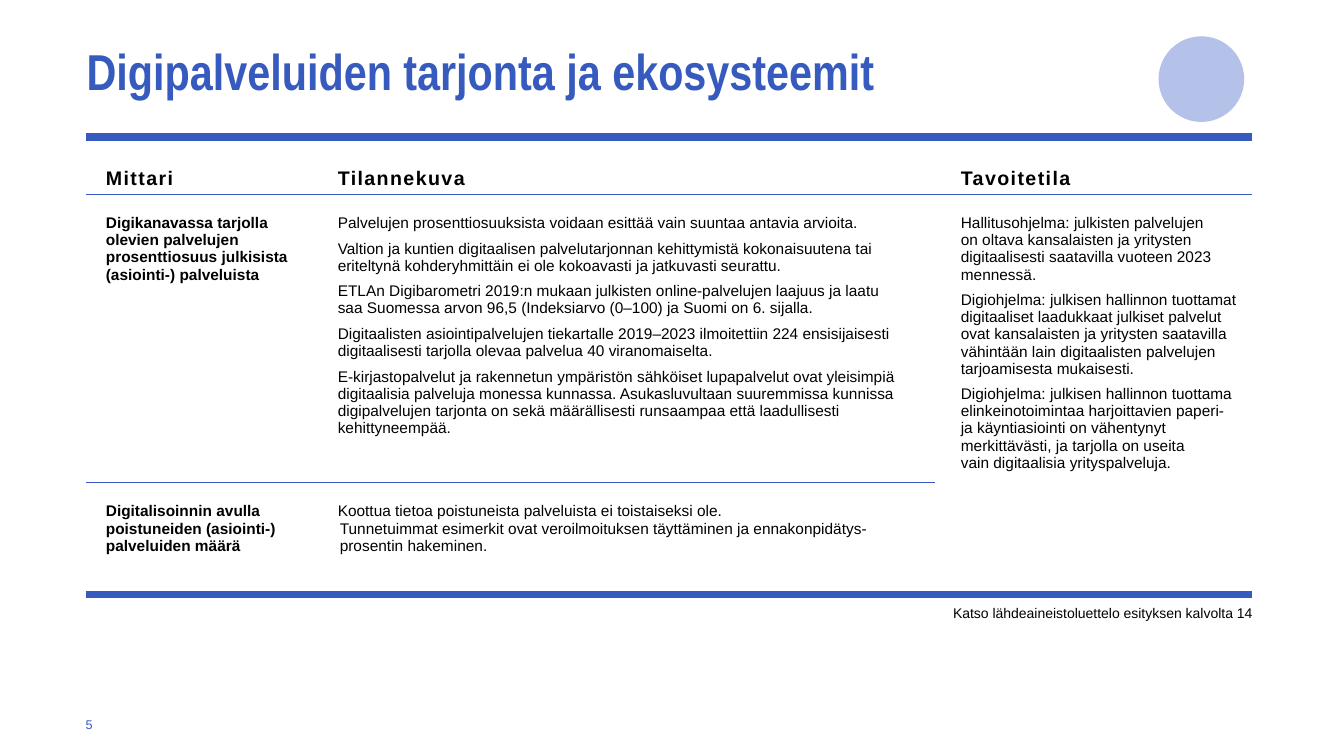
import copy
from dataclasses import dataclass

import pptx
import pptx.dml.color
import pptx.enum.shapes
import pptx.enum.text
import pptx.oxml
import pptx.oxml.ns
import pptx.util
from pptx.util import Inches


@dataclass(frozen=True)
class Theme:
    blue: str = "365ABD"
    pale: str = "ACBCE7"
    black: str = "000000"
    font: str = "Arial"
    title_font: str = "Arial Narrow"
    title: int = 36
    heading: int = 14
    body: int = 11
    note: int = 10
    number: int = 9


theme = Theme()
qn = pptx.oxml.ns.qn
Align = pptx.enum.text.PP_ALIGN
Anchor = pptx.enum.text.MSO_ANCHOR


def write(frame, texts, size, color=theme.black, bold=False, name=theme.font,
          align=Align.LEFT, after=0, tracking=0):
    """Fill a text frame with one paragraph per text; newlines are line breaks."""
    frame.word_wrap = True
    for index, text in enumerate(texts):
        para = frame.paragraphs[0] if index == 0 else frame.add_paragraph()
        para.text = text
        para.alignment = align
        para.space_before = pptx.util.Pt(0)
        para.space_after = pptx.util.Pt(after)
        for span in para.runs:
            span.font.name = name
            span.font.size = pptx.util.Pt(size)
            span.font.bold = bold
            span.font.color.rgb = pptx.dml.color.RGBColor.from_string(color)
            if tracking:
                span.font._element.set("spc", str(tracking * 100))
        # Line breaks take the type size of the text around them
        for line_break in para._p.findall(qn("a:br")):
            line_break.insert(0, copy.deepcopy(para.runs[0].font._element))


def set_margins(holder, left, top, right, bottom):
    holder.margin_left, holder.margin_top = Inches(left), Inches(top)
    holder.margin_right, holder.margin_bottom = Inches(right), Inches(bottom)


deck = pptx.Presentation()
deck.slide_width, deck.slide_height = Inches(13.33), Inches(7.5)
page = deck.slides.add_slide(deck.slide_layouts[5])

# Title
title = page.shapes.title
title.left, title.top = Inches(0.86), Inches(0)
title.width, title.height = Inches(11.56), Inches(1.45)
set_margins(title.text_frame, 0, 0, 0, 0)
title.text_frame.vertical_anchor = Anchor.MIDDLE
title.text_frame.auto_size = pptx.enum.text.MSO_AUTO_SIZE.NONE
write(title.text_frame, ["Digipalveluiden tarjonta ja ekosysteemit"], theme.title,
      theme.blue, True, theme.title_font)
title.text_frame.paragraphs[0].line_spacing = 0.95

# Table content: each cell is a list of paragraphs
headings = ["Mittari", "Tilannekuva", "Tavoitetila"]
offering = [
    "Palvelujen prosenttiosuuksista voidaan esittää vain suuntaa antavia arvioita.",
    "Valtion ja kuntien digitaalisen palvelutarjonnan kehittymistä kokonaisuutena tai "
    "eriteltynä kohderyhmittäin ei ole kokoavasti ja jatkuvasti seurattu.",
    "ETLAn Digibarometri 2019:n mukaan julkisten online-palvelujen laajuus ja laatu \n"
    "saa Suomessa arvon 96,5 (Indeksiarvo (0–100) ja Suomi on 6. sijalla.",
    "Digitaalisten asiointipalvelujen tiekartalle 2019–2023 ilmoitettiin 224 ensisijaisesti "
    "digitaalisesti tarjolla olevaa palvelua 40 viranomaiselta.",
    "E-kirjastopalvelut ja rakennetun ympäristön sähköiset lupapalvelut ovat yleisimpiä "
    "digitaalisia palveluja monessa kunnassa. Asukasluvultaan suuremmissa kunnissa "
    "digipalvelujen tarjonta on sekä määrällisesti runsaampaa että laadullisesti "
    "kehittyneempää.",
]
targets = [
    "Hallitusohjelma: julkisten palvelujen \non oltava kansalaisten ja yritysten "
    "digitaalisesti saatavilla vuoteen 2023 mennessä.",
    "Digiohjelma: julkisen hallinnon tuottamat digitaaliset laadukkaat julkiset palvelut "
    "ovat kansalaisten ja yritysten saatavilla vähintään lain digitaalisten palvelujen "
    "tarjoamisesta mukaisesti.",
    "Digiohjelma: julkisen hallinnon tuottama elinkeinotoimintaa harjoittavien paperi- \n"
    "ja käyntiasiointi on vähentynyt merkittävästi, ja tarjolla on useita \n"
    "vain digitaalisia yrityspalveluja.",
]
removed = [
    "Koottua tietoa poistuneista palveluista ei toistaiseksi ole. \n"
    "Tunnetuimmat esimerkit ovat veroilmoituksen täyttäminen ja ennakonpidätys-\n"
    "prosentin hakeminen.",
]
rows = [
    [[heading] for heading in headings],
    [["Digikanavassa tarjolla olevien palvelujen \n"
      "prosenttiosuus julkisista (asiointi-) palveluista"], offering, targets],
    [["Digitalisoinnin avulla poistuneiden (asiointi-)\npalveluiden määrä"], removed, []],
]
column_widths = [2.3, 6.12, 3.15]
row_heights = [0.57, 2.86, 1.11]
rule_weights = [6, 1, 1, 6]
left_margins = [0.2, 0.2, 0.26]

# Table
frame = page.shapes.add_table(3, 3, Inches(0.85), Inches(1.36),
                              Inches(sum(column_widths)), Inches(sum(row_heights)))
table = frame.table
table.first_row = table.horz_banding = False
for column, width in zip(table.columns, column_widths):
    column.width = Inches(width)
for row, height in zip(table.rows, row_heights):
    row.height = Inches(height)
table.cell(1, 2).merge(table.cell(2, 2))

for row_index, row in enumerate(rows):
    for column_index, texts in enumerate(row):
        cell = table.cell(row_index, column_index)
        is_heading = row_index == 0
        set_margins(cell, left_margins[column_index], 0.05 if is_heading else 0.2, 0.1, 0.05)
        cell.vertical_anchor = Anchor.BOTTOM if is_heading else Anchor.TOP
        write(cell.text_frame, texts, theme.heading if is_heading else theme.body,
              bold=is_heading or column_index == 0, after=0 if is_heading else 6,
              tracking=1 if is_heading else 0)

        # Horizontal rules only; the merged target cell has none across its middle
        top, bottom = rule_weights[row_index], rule_weights[row_index + 1]
        if cell.is_merge_origin:
            bottom = rule_weights[-1]
        if cell.is_spanned:
            top = 0
        properties = cell._tc.get_or_add_tcPr()
        for side, weight in (("lnL", 0), ("lnR", 0), ("lnT", top), ("lnB", bottom)):
            paint = (f'<a:solidFill><a:srgbClr val="{theme.blue}"/></a:solidFill>'
                     if weight else "<a:noFill/>")
            properties.append(pptx.oxml.parse_xml(
                f'<a:{side} {pptx.oxml.ns.nsdecls("a")} w="{pptx.util.Pt(weight)}">'
                f'{paint}</a:{side}>'))
        cell.fill.background()

# Small hanging indent in the lower status cell
hanging = table.cell(2, 1).text_frame.paragraphs[0]._p.get_or_add_pPr()
hanging.set("marL", str(Inches(0.02)))
hanging.set("indent", str(Inches(-0.02)))

# Round emblem
emblem = page.shapes.add_shape(pptx.enum.shapes.MSO_SHAPE.OVAL,
                               Inches(11.49), Inches(0.36), Inches(0.85), Inches(0.85))
emblem.shadow.inherit = False
emblem.fill.solid()
emblem.fill.fore_color.rgb = pptx.dml.color.RGBColor.from_string(theme.pale)
emblem.line.fill.background()
emblem_color = emblem._element.spPr.find(qn("a:solidFill")).find(qn("a:srgbClr"))
pptx.oxml.ns  # namespace helpers
alpha = pptx.oxml.parse_xml(f'<a:alpha {pptx.oxml.ns.nsdecls("a")} val="90000"/>')
emblem_color.append(alpha)

# Source note
note = page.shapes.add_textbox(Inches(9.23), Inches(5.95), Inches(3.19), Inches(0.44))
set_margins(note.text_frame, 0.1, 0.05, 0, 0.05)
write(note.text_frame, ["Katso lähdeaineistoluettelo esityksen kalvolta 14"], theme.note,
      align=Align.RIGHT)

# Page number
number = page.shapes.add_textbox(Inches(0.85), Inches(7.06), Inches(0.4), Inches(0.25))
set_margins(number.text_frame, 0, 0, 0, 0)
number.text_frame.vertical_anchor = Anchor.MIDDLE
write(number.text_frame, ["5"], theme.number, theme.blue)

deck.save("out.pptx")
